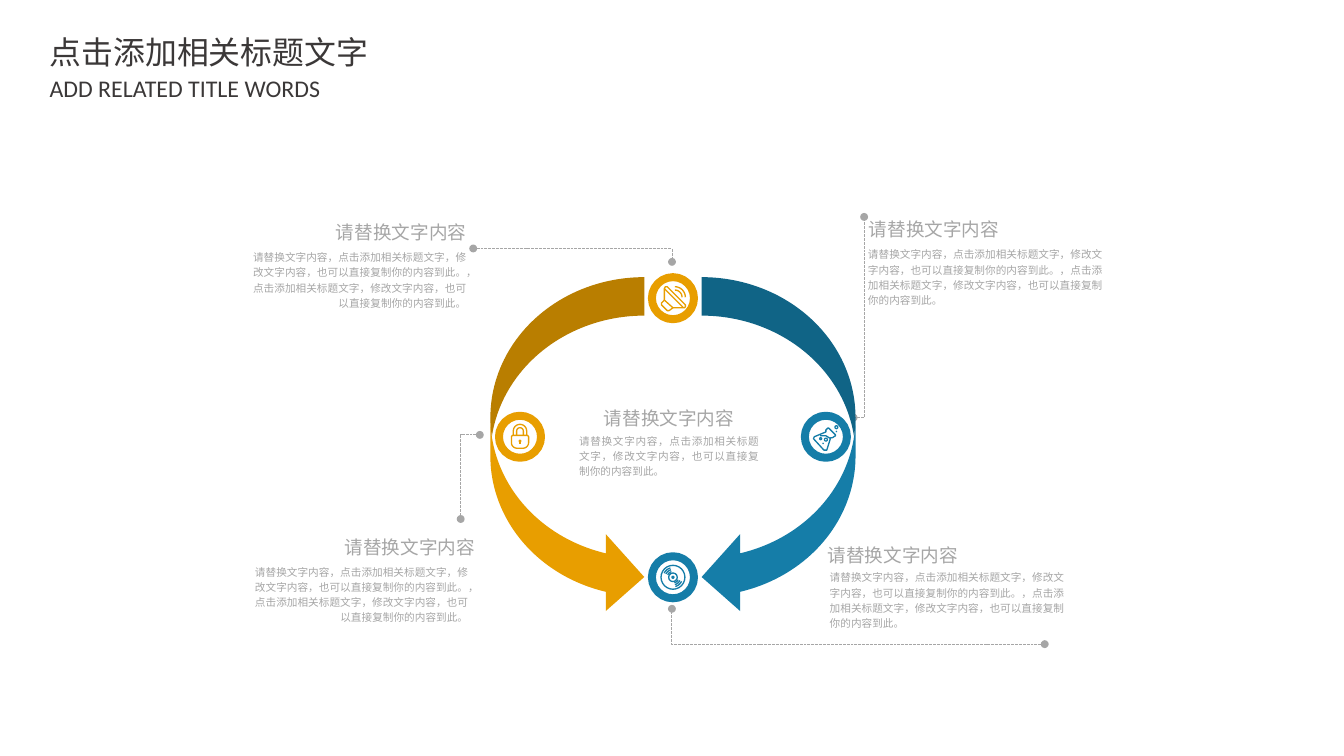
from math import cos, radians, sin

from lxml.etree import SubElement
from pptx import Presentation
from pptx.dml.color import RGBColor
from pptx.enum.dml import MSO_LINE
from pptx.enum.shapes import MSO_CONNECTOR, MSO_SHAPE
from pptx.enum.text import PP_ALIGN
from pptx.oxml.ns import qn
from pptx.util import Inches, Pt

GOLD, BLUE, GRAY, DARK, WHITE = "E89E00", "157DA8", "A6A6A6", "3B3838", "FFFFFF"
HEADING = "请替换文字内容"
SHORT_BODY = HEADING + "，点击添加相关标题文字，修改文字内容，也可以直接复制你的内容到此。"
LONG_BODY = SHORT_BODY + "，点击添加相关标题文字，修改文字内容，也可以直接复制你的内容到此。"


def color(hex_string):
    return RGBColor.from_string(hex_string)


def paint(shape, fill=None, line=None, width=1):
    shape.shadow.inherit = False
    if fill:
        shape.fill.solid()
        shape.fill.fore_color.rgb = color(fill)
    else:
        shape.fill.background()
    if line:
        shape.line.color.rgb = color(line)
        shape.line.width = Pt(width)
    else:
        shape.line.fill.background()


def add_text(slide, box, text, size, hue=GRAY, font="Arial", align=PP_ALIGN.LEFT,
             wrap=False, spacing=1.2, insets=(0, 0)):
    frame = slide.shapes.add_textbox(*map(Inches, box)).text_frame
    frame.word_wrap = wrap
    frame.margin_left = frame.margin_right = Inches(insets[0])
    frame.margin_top = frame.margin_bottom = Inches(insets[1])
    paragraph = frame.paragraphs[0]
    paragraph.text = text
    paragraph.alignment = align
    paragraph.line_spacing = spacing
    paragraph.font.name = font
    paragraph.font.size = Pt(size)
    paragraph.font.color.rgb = color(hue)


def add_leader(slide, start, end):
    """Dashed elbow that leaves horizontally and arrives vertically."""
    leader = slide.shapes.add_connector(MSO_CONNECTOR.ELBOW, *map(Inches, start + end))
    leader.line.color.rgb = color(GRAY)
    leader.line.width = Pt(0.75)
    leader.line.dash_style = MSO_LINE.SQUARE_DOT
    properties = leader._element.spPr
    properties.find(qn("a:prstGeom")).set("prst", "bentConnector2")
    outline = properties.find(qn("a:ln"))
    for end_mark in ("a:headEnd", "a:tailEnd"):
        SubElement(outline, qn(end_mark), type="oval")
    SubElement(properties, qn("a:effectLst"))


def add_ring(slide, center, hue):
    radius = 0.22
    box = (center[0] - radius, center[1] - radius, 2 * radius, 2 * radius)
    ring = slide.shapes.add_shape(MSO_SHAPE.OVAL, *map(Inches, box))
    paint(ring, WHITE, hue, 6)


def add_cycle_arrow(slide, left, hue, mirrored=False):
    arrow = slide.shapes.add_shape(MSO_SHAPE.CURVED_RIGHT_ARROW, Inches(left),
                                   Inches(2.9), Inches(1.61), Inches(3.54))
    paint(arrow, hue)
    if mirrored:
        arrow._element.spPr.find(qn("a:xfrm")).set("flipH", "1")


# Icon parts are measured in hundredths of an inch from the icon's center.
def arc(x, y, radius, start, end, steps=12):
    angles = [radians(start + (end - start) * i / steps) for i in range(steps + 1)]
    return [(x + radius * cos(a), y + radius * sin(a)) for a in angles]


def add_stroke(slide, center, hue, points, closed=False):
    spots = [(Inches(center[0] + x / 100), Inches(center[1] + y / 100)) for x, y in points]
    builder = slide.shapes.build_freeform(*spots[0])
    builder.add_line_segments(spots[1:], close=closed)
    paint(builder.convert_to_shape(), line=hue)


def add_circle(slide, center, hue, x, y, radius, solid=False):
    box = (center[0] + (x - radius) / 100, center[1] + (y - radius) / 100,
           radius / 50, radius / 50)
    circle = slide.shapes.add_shape(MSO_SHAPE.OVAL, *map(Inches, box))
    paint(circle, hue if solid else None, None if solid else hue)


def add_speaker(slide, center, hue):
    horn = [(-9, -10), (-8, -12), (-6, -12), (13, 7), (13, 9), (12, 10), (0, 10), (-9, 2)]
    add_stroke(slide, center, hue, horn, closed=True)
    add_stroke(slide, center, hue, [(-9, -10), (11, 10)])
    add_stroke(slide, center, hue, [(-9, 2), (-12, 5), (-12, 7), (-6, 13), (-4, 13), (0, 10)])
    for radius in (7.5, 11):
        add_stroke(slide, center, hue, arc(2, -1, radius, -90, 0))


def add_flask(slide, center, hue):
    glass = [(0, -7), (0, -5), (-12, 0), (-13, 2), (-2, 14), (1, 14), (5, 1),
             (7, 1), (10, -1), (10, -2), (3, -9), (2, -9)]
    add_stroke(slide, center, hue, glass, closed=True)
    add_stroke(slide, center, hue, [(-6, -1), (0, -1), (5, 2)])
    for x, y, radius in ((0, 3, 1.5), (11, -10, 1.5), (-5.5, 2, 1)):
        add_circle(slide, center, hue, x, y, radius)
    for x, y in ((-3, 7), (11, -5.5)):
        add_circle(slide, center, hue, x, y, 0.8, solid=True)


def add_disc(slide, center, hue):
    for radius in (12.5, 4.5, 1):
        add_circle(slide, center, hue, 0, 0, radius)
    for radius in (6, 8, 10):
        for start in (25, 205):
            add_stroke(slide, center, hue, arc(0, 0, radius, start, start + 50))


def add_lock(slide, center, hue):
    body = [(-9, 0), (-8, -1.5), (8, -1.5), (9, 0)] + arc(3, 6, 6, 0, 90) + arc(-3, 6, 6, 90, 180)
    add_stroke(slide, center, hue, body, closed=True)
    for radius in (7, 3.5):
        add_stroke(slide, center, hue,
                   [(-radius, -1.5)] + arc(0, -6, radius, 180, 360) + [(radius, -1.5)])
    add_circle(slide, center, hue, 0, 4.5, 1.5, solid=True)
    add_stroke(slide, center, hue, [(0, 5), (0, 7.5)])


def main():
    deck = Presentation()
    deck.slide_width, deck.slide_height = Inches(14.06), Inches(7.91)
    slide = deck.slides.add_slide(deck.slide_layouts[6])

    # Leader lines
    for start, end in (((8.93, 4.37), (9.04, 2.27)), ((10.93, 6.74), (7.03, 6.37)),
                       ((5.02, 4.55), (4.82, 5.43)), ((4.95, 2.6), (7.03, 2.74))):
        add_leader(slide, start, end)

    # Stations and the arrows between them
    stations = (((7.04, 3.12), GOLD, add_speaker), ((8.64, 4.57), BLUE, add_flask),
                ((7.04, 6.04), BLUE, add_disc), ((5.44, 4.57), GOLD, add_lock))
    for center, hue, _ in stations:
        add_ring(slide, center, hue)
    add_cycle_arrow(slide, 5.13, GOLD)
    add_cycle_arrow(slide, 7.34, BLUE, mirrored=True)
    for center, hue, add_icon in stations:
        add_icon(slide, center, hue)

    # Text in the middle
    add_text(slide, (6.21, 4.16, 1.58, 0.38), HEADING, 14, align=PP_ALIGN.CENTER,
             insets=(0.1, 0.05))
    add_text(slide, (5.96, 4.47, 2.08, 0.59), SHORT_BODY, 8, align=PP_ALIGN.JUSTIFY,
             wrap=True, insets=(0.1, 0.05))

    # Text around the cycle
    for heading_at, body_at, width, align in (
            ((3.51, 2.27), (2.59, 2.6), 2.29, PP_ALIGN.RIGHT),
            ((3.6, 5.56), (2.61, 5.89), 2.29, PP_ALIGN.RIGHT),
            ((9.09, 2.23), (9.08, 2.57), 2.48, PP_ALIGN.LEFT),
            ((8.66, 5.64), (8.68, 5.95), 2.48, PP_ALIGN.LEFT)):
        add_text(slide, heading_at + (1.37, 0.28), HEADING, 14, align=align)
        add_text(slide, body_at + (width, 0.65), LONG_BODY, 8, align=align, wrap=True)

    # Title
    add_text(slide, (0.41, 0.29, 3.58, 0.51), "点击添加相关标题文字", 24, DARK,
             "Noto Sans CJK SC", spacing=1.0, insets=(0.11, 0.05))
    add_text(slide, (0.41, 0.72, 3.07, 0.41), "ADD RELATED TITLE WORDS", 18, DARK,
             "Calibri", spacing=1.0, insets=(0.11, 0.05))

    deck.save("out.pptx")


if __name__ == "__main__":
    main()
